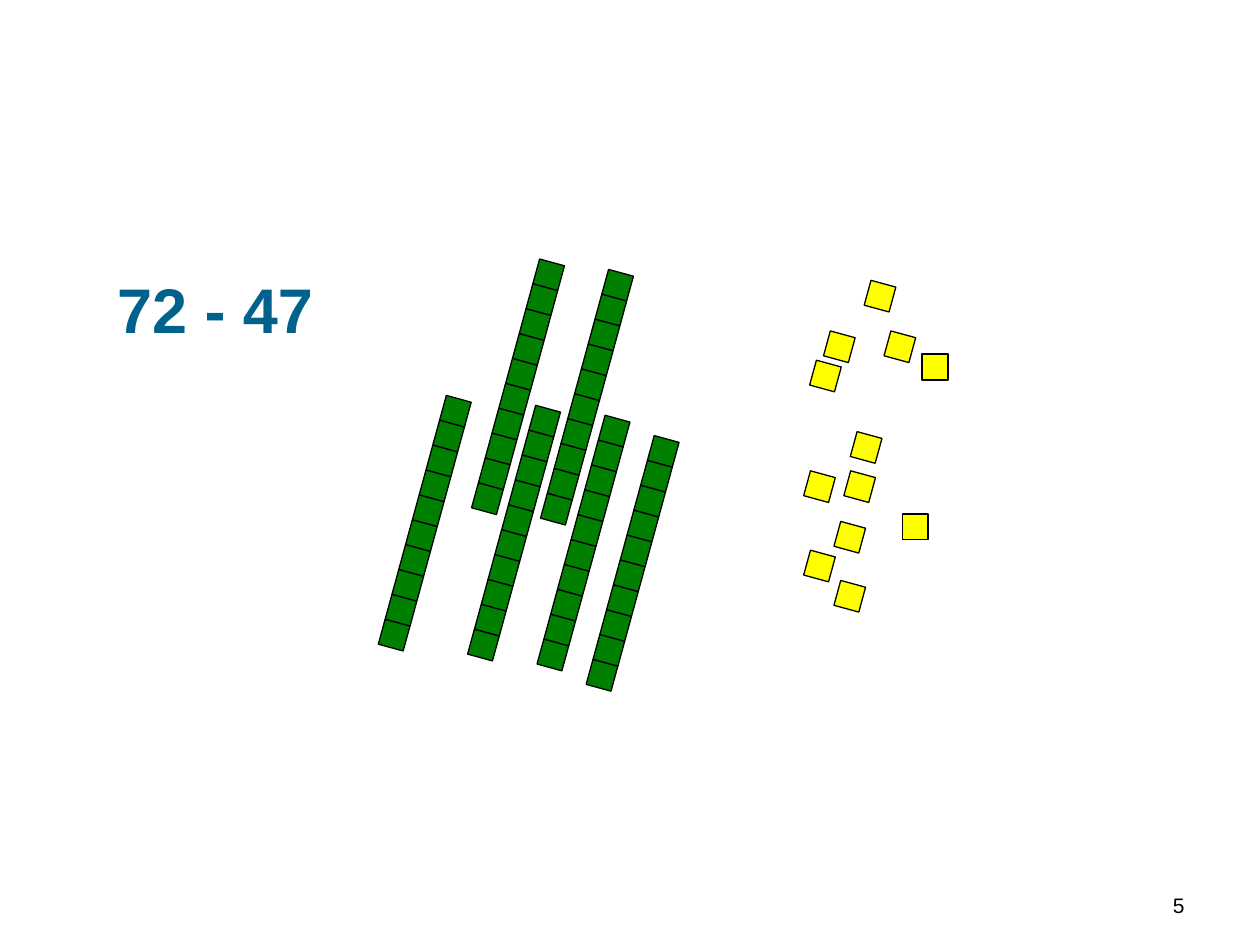
import math
from dataclasses import dataclass
from typing import Any

from pptx import Presentation
from pptx import util as u
from pptx.dml.color import RGBColor
from pptx.enum import shapes, text


@dataclass(frozen=True)
class Theme:
    font: str = "Arial"
    title: RGBColor = RGBColor(0x00, 0x62, 0x8C)
    ink: RGBColor = RGBColor(0, 0, 0)
    ten: RGBColor = RGBColor(0x00, 0x80, 0x00)
    one: RGBColor = RGBColor(0xFF, 0xFF, 0x00)
    title_size: int = 36
    number_size: int = 12
    line_width: float = 0.75


@dataclass(frozen=True)
class Cube:
    """Top-left corner before rotation, in centimetres."""
    x: float
    y: float
    angle: float = 105.3


@dataclass(frozen=True)
class Label:
    words: str
    x: float
    y: float
    w: float
    h: float
    size: int
    color: RGBColor
    bold: bool = False
    align: Any = text.PP_ALIGN.LEFT
    anchor: Any = text.MSO_ANCHOR.TOP


THEME = Theme()
SIDE = 0.52
CUBES_PER_ROD = 10

# First (top) cube of each ten-rod
RODS = [
    Cube(12.19, 5.49), Cube(10.72, 8.23), Cube(8.92, 8.03),
    Cube(10.8, 5.28), Cube(13.11, 8.84), Cube(12.12, 8.43),
]

# Loose unit cubes
ONES = [
    Cube(18.59, 7.14, 0), Cube(17.48, 5.71), Cube(17.88, 6.73),
    Cube(16.38, 7.32), Cube(17.07, 9.55), Cube(16.66, 6.73),
    Cube(16.87, 10.57), Cube(17.2, 8.76), Cube(16.26, 9.55),
    Cube(16.26, 11.15), Cube(16.87, 11.76), Cube(18.19, 10.36, 0),
]

LABELS = [
    Label("72 - 47", 2.11, 5.33, 5.59, 1.78, THEME.title_size, THEME.title,
          bold=True),
    Label("5", 18.21, 17.35, 5.92, 1.27, THEME.number_size, THEME.ink,
          align=text.PP_ALIGN.RIGHT, anchor=text.MSO_ANCHOR.BOTTOM),
]


def draw_cube(parent: Any, cube: Cube, color: RGBColor) -> None:
    sp = parent.add_shape(shapes.MSO_SHAPE.RECTANGLE, u.Cm(cube.x),
                          u.Cm(cube.y), u.Cm(SIDE), u.Cm(SIDE))
    sp.rotation = cube.angle
    sp.shadow.inherit = False
    sp.fill.solid()
    sp.fill.fore_color.rgb = color
    sp.line.color.rgb = THEME.ink
    sp.line.width = u.Pt(THEME.line_width)


def draw_rod(parent: Any, top: Cube) -> None:
    """Stack grouped cubes along the direction in which they are turned."""
    rod = parent.add_group_shape()
    turn = math.radians(top.angle)
    for i in range(CUBES_PER_ROD):
        reach = i * SIDE
        draw_cube(rod.shapes, Cube(top.x + reach * math.cos(turn),
                                   top.y + reach * math.sin(turn),
                                   top.angle), THEME.ten)


def draw_label(parent: Any, label: Label) -> None:
    sp = parent.add_textbox(u.Cm(label.x), u.Cm(label.y),
                            u.Cm(label.w), u.Cm(label.h))
    tf = sp.text_frame
    tf.word_wrap = True
    tf.vertical_anchor = label.anchor
    p = tf.paragraphs[0]
    p.text = label.words
    p.alignment = label.align
    p.font.name = THEME.font
    p.font.size = u.Pt(label.size)
    p.font.bold = label.bold
    p.font.color.rgb = label.color


def main() -> None:
    prs = Presentation()
    prs.slide_width, prs.slide_height = u.Cm(25.4), u.Cm(19.05)
    slide = prs.slides.add_slide(prs.slide_layouts[6])

    # Tens
    for rod in RODS:
        draw_rod(slide.shapes, rod)

    # Ones
    for one in ONES:
        draw_cube(slide.shapes, one, THEME.one)

    # Problem and page number
    for label in LABELS:
        draw_label(slide.shapes, label)

    prs.save("out.pptx")


if __name__ == "__main__":
    main()
